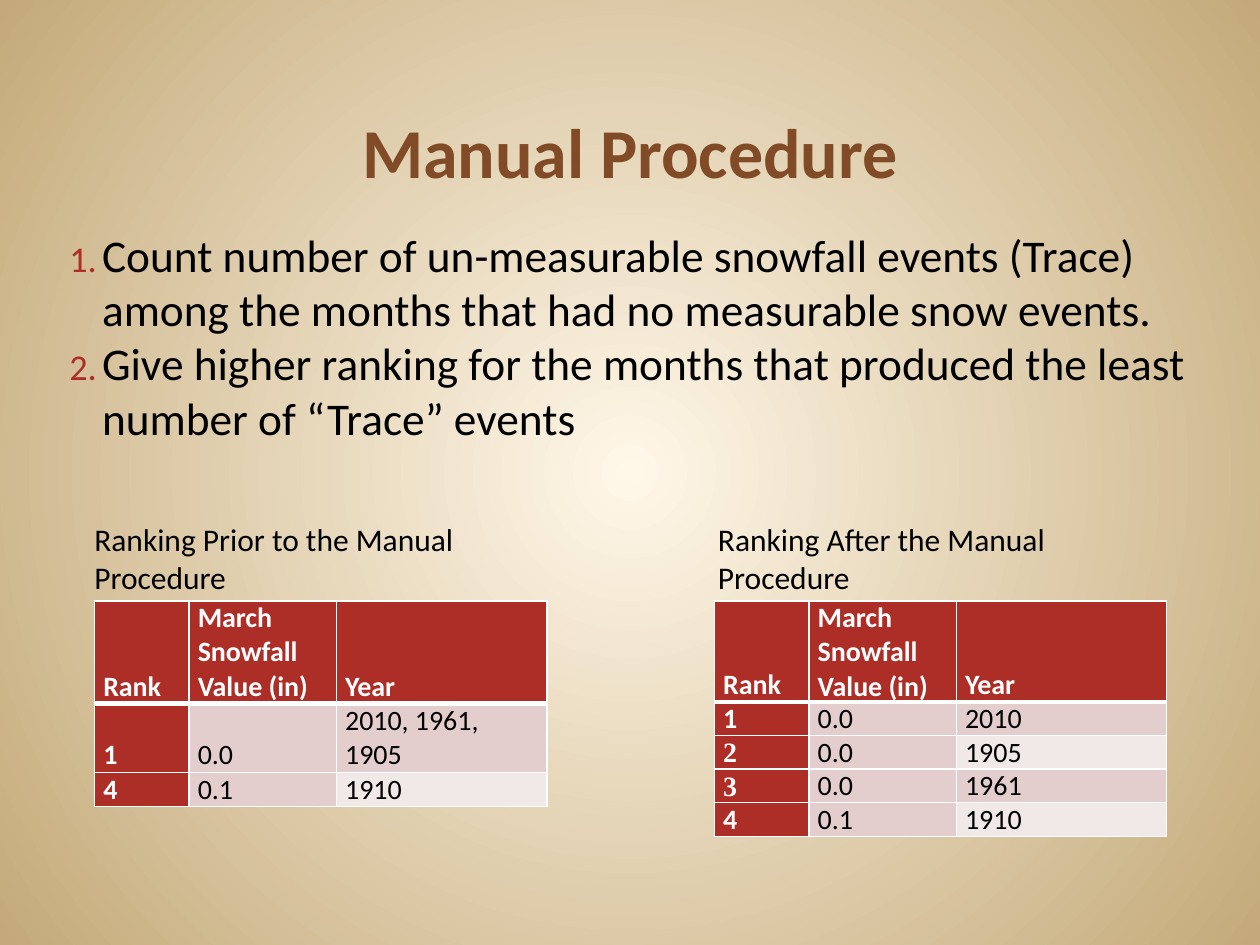
from dataclasses import dataclass

from pptx import Presentation
from pptx.dml.color import RGBColor
from pptx.enum import text as t
from pptx.oxml import parse_xml
from pptx.oxml.ns import nsdecls, qn
from pptx.util import Inches, Pt


@dataclass(frozen=True)
class Theme:
    font: str = "Calibri"
    numeral_font: str = "Times New Roman"
    title: str = "804B26"
    ink: str = "000000"
    accent: str = "AD2E27"
    white: str = "FFFFFF"
    band_dark: str = "E3CDCD"
    band_light: str = "F1E8E8"
    glow: str = "FFF7E8"
    edge: str = "C4AA7A"
    title_size: float = 40
    step_size: float = 25.9
    caption_size: float = 18
    table_size: float = 16


@dataclass(frozen=True)
class Ranking:
    caption: tuple[str, ...]
    caption_left: float
    caption_width: float
    left: float
    height: float
    rows: tuple[tuple[str, str, str], ...]
    serif_ranks: tuple[str, ...] = ()


THEME = Theme()
HEADER = ("Rank", "March Snowfall Value (in)", "Year")
COLUMN_WIDTHS = (0.75, 1.17, 1.67)
STEPS = (
    "Count number of un-measurable snowfall events (Trace) among the months "
    "that had no measurable snow events.",
    "Give higher ranking for the months that produced the least number of “Trace” events",
)
RANKINGS = (
    Ranking(("Ranking Prior to the Manual", "Procedure"), 0.65, 3.18, 0.75, 1.33,
            (("1", "0.0", "2010, 1961, 1905"), ("4", "0.1", "1910"))),
    Ranking(("Ranking After the Manual", "Procedure"), 5.6, 2.93, 5.67, 1.87,
            (("1", "0.0", "2010"), ("2", "0.0", "1905"),
             ("3", "0.0", "1961"), ("4", "0.1", "1910")), ("2", "3")),
)


def write(frame, *lines: str, size: float, color: str = THEME.ink,
          font: str = THEME.font, bold: bool = False, align=t.PP_ALIGN.LEFT) -> None:
    """Fill a text frame with one paragraph per line."""
    frame.word_wrap = True
    for index, line in enumerate(lines):
        paragraph = frame.add_paragraph() if index else frame.paragraphs[0]
        paragraph.alignment = align
        paragraph.space_before = Pt(0)
        run = paragraph.add_run()
        run.text = line
        run.font.size = Pt(size)
        run.font.name = font
        run.font.bold = bold
        run.font.color.rgb = RGBColor.from_string(color)


def place(shape, left: float, top: float, width: float, height: float) -> None:
    shape.left, shape.top = Inches(left), Inches(top)
    shape.width, shape.height = Inches(width), Inches(height)


def paint_background(slide) -> None:
    fill = slide.background.fill
    fill.gradient()
    for stop, color in zip(fill.gradient_stops, (THEME.glow, THEME.edge)):
        stop.color.rgb = RGBColor.from_string(color)
    linear = next(slide.element.iter(qn("a:lin")))
    linear.getparent().replace(linear, parse_xml(
        f'<a:path {nsdecls("a")} path="circle">'
        '<a:fillToRect l="50000" t="50000" r="50000" b="50000"/></a:path>'))


def number_paragraph(paragraph) -> None:
    properties = paragraph._p.get_or_add_pPr()
    properties.set("marL", str(Inches(0.26)))
    properties.set("indent", str(-Inches(0.26)))
    for markup in (f'<a:buClr {nsdecls("a")}><a:srgbClr val="{THEME.accent}"/></a:buClr>',
                   f'<a:buSzPct {nsdecls("a")} val="80000"/>',
                   f'<a:buFont {nsdecls("a")} typeface="{THEME.font}"/>',
                   f'<a:buAutoNum {nsdecls("a")} type="arabicPeriod"/>'):
        properties.append(parse_xml(markup))


def border_cell(cell, **widths: float) -> None:
    properties = cell._tc.get_or_add_tcPr()
    for side, width in widths.items():
        properties.append(parse_xml(
            f'<a:ln{side} {nsdecls("a")} w="{Pt(width)}"><a:solidFill>'
            f'<a:srgbClr val="{THEME.white}"/></a:solidFill></a:ln{side}>'))


def draw_cell(cell, words: str, row: int, column: int, font: str) -> None:
    heading = row == 0 or column == 0
    if heading:
        background = THEME.accent
    elif column == 1 or row % 2:
        background = THEME.band_dark
    else:
        background = THEME.band_light
    border_cell(cell, L=1, R=1, T=3 if row == 1 else 1, B=3 if row == 0 else 1)
    cell.fill.solid()
    cell.fill.fore_color.rgb = RGBColor.from_string(background)
    cell.vertical_anchor = t.MSO_ANCHOR.BOTTOM
    cell.margin_left = cell.margin_right = Inches(0.07)
    cell.margin_top = cell.margin_bottom = 0
    write(cell.text_frame, words, size=THEME.table_size, font=font, bold=heading,
          color=THEME.white if heading else THEME.ink)


def draw_ranking(slide, ranking: Ranking) -> None:
    rows = (HEADER, *ranking.rows)
    holder = slide.shapes.add_table(
        len(rows), len(HEADER), Inches(ranking.left), Inches(4.77),
        Inches(sum(COLUMN_WIDTHS)), Inches(ranking.height))
    table = holder.table
    for column, width in zip(table.columns, COLUMN_WIDTHS):
        column.width = Inches(width)
    for index, (row, words) in enumerate(zip(table.rows, rows)):
        row.height = Inches(0.22 if index else 0.21)
        for column, word in enumerate(words):
            serif = column == 0 and word in ranking.serif_ranks
            draw_cell(table.cell(index, column), word, index, column,
                      THEME.numeral_font if serif else THEME.font)
    holder.height = Inches(ranking.height)

    caption = slide.shapes.add_textbox(
        Inches(ranking.caption_left), Inches(4.08),
        Inches(ranking.caption_width), Inches(0.71))
    write(caption.text_frame, *ranking.caption, size=THEME.caption_size)


def main() -> None:
    deck = Presentation()
    deck.slide_width, deck.slide_height = Inches(10), Inches(7.5)
    slide = deck.slides.add_slide(deck.slide_layouts[1])
    paint_background(slide)

    title, steps = slide.shapes.title, slide.placeholders[1]
    place(title, 0.5, 0.33, 9, 1.25)
    title.text_frame.vertical_anchor = t.MSO_ANCHOR.BOTTOM
    write(title.text_frame, "Manual Procedure", size=THEME.title_size,
          color=THEME.title, bold=True, align=t.PP_ALIGN.CENTER)

    place(steps, 0.5, 1.75, 9, 2.08)
    frame = steps.text_frame
    frame.auto_size = t.MSO_AUTO_SIZE.NONE
    frame.margin_left = frame.margin_right = Inches(0.05)
    frame.margin_top = frame.margin_bottom = Inches(0.05)
    write(frame, *STEPS, size=THEME.step_size)
    for paragraph in frame.paragraphs:
        number_paragraph(paragraph)

    for ranking in RANKINGS:
        draw_ranking(slide, ranking)
    deck.save("out.pptx")


if __name__ == "__main__":
    main()
